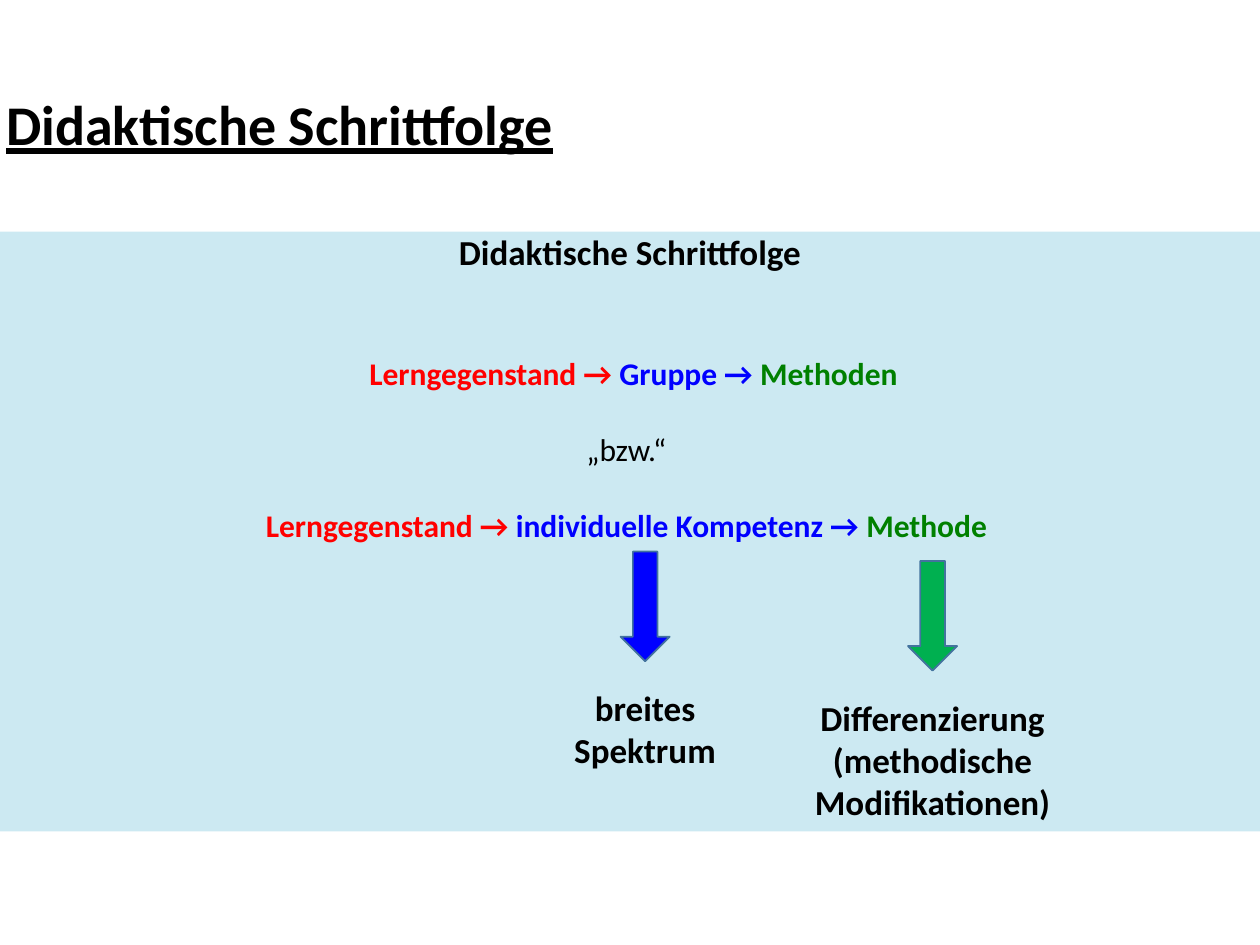
from pptx import Presentation
from pptx.dml.color import RGBColor
from pptx.enum.shapes import MSO_SHAPE as Form
from pptx.enum.text import MSO_ANCHOR as Anchor, PP_ALIGN as Align
from pptx.util import Cm, Pt

BLACK, RED, BLUE, GREEN = "000000", "FF0000", "0000FF", "008000"
ARROW_LEN, ARROW_WIDE, LABEL_DROP = 2.21, 0.99, 2.6


def color(code):
    return RGBColor.from_string(code)


def add_text(slide, box, lines, size=20, bold=True, under=False):
    """Each line is (space before, size or None, runs); a run is (text, colour, bold)."""
    frame = slide.shapes.add_textbox(*map(Cm, box)).text_frame
    frame.word_wrap = True
    frame.vertical_anchor = Anchor.TOP
    for i, (gap, own, runs) in enumerate(lines):
        para = frame.add_paragraph() if i else frame.paragraphs[0]
        para.alignment = Align.CENTER
        if gap:
            para.space_before = Pt(gap)
        for text, code, heavy in runs:
            run = para.add_run()
            run.text = text
            font = run.font
            font.name, font.size = "Calibri", Pt(own or size)
            font.bold, font.underline = bold and heavy, under
            font.color.rgb = color(code)


def plain(*texts):
    return [(0, None, [(text, BLACK, True)]) for text in texts]


def add_form(slide, kind, box, fill, line=None):
    form = slide.shapes.add_shape(kind, *map(Cm, box))
    form.shadow.inherit = False
    form.fill.solid()
    form.fill.fore_color.rgb = color(fill)
    if line:
        form.line.color.rgb = color(line)
        form.line.width = Pt(1)
    else:
        form.line.fill.background()
    return form


def add_steps(slide, box):
    def chain(group, method, lead=""):
        return [(lead + "Lerngegenstand → ", RED, True),
                (group + " → ", BLUE, True), (method, GREEN, True)]

    add_text(slide, box, [
        (0, 20, [("Didaktische Schrittfolge", BLACK, True)]),
        (46.4, None, chain("Gruppe", "Methoden", " ")),
        (22, None, [("„bzw.“ ", BLACK, False)]),
        (22, None, chain("individuelle Kompetenz", "Methode ")),
    ], size=18)


def add_branch(slide, box, fill, *texts):
    """Down-pointing arrow centred above its label."""
    left, top, width, height = box
    arrow = add_form(slide, Form.RIGHT_ARROW,
                     (left + (width - ARROW_LEN) / 2,
                      top + (ARROW_LEN - ARROW_WIDE) / 2,
                      ARROW_LEN, ARROW_WIDE), fill, "43739E")
    arrow.rotation = 90
    add_text(slide, (left, top + LABEL_DROP, width, height - LABEL_DROP),
             plain(*texts))


def main():
    deck = Presentation()
    deck.slide_width, deck.slide_height = Cm(25.4), Cm(19.05)
    slide = deck.slides.add_slide(deck.slide_layouts[6])
    add_form(slide, Form.RECTANGLE, (0, 4.67, 25.4, 12.09), "CCE9F2")
    add_steps(slide, (4.9, 4.52, 15.6, 6.58))
    add_branch(slide, (15.5, 11.31, 6.6, 5.42), "00B050",
               "Differenzierung", "(methodische Modifikationen)")
    add_branch(slide, (11.1, 11.12, 3.81, 4.56), BLUE, "breites Spektrum")
    add_text(slide, (-0.71, 1.68, 12.7, 1.63),
             plain("Didaktische Schrittfolge"), size=32, under=True)
    deck.save("out.pptx")


if __name__ == "__main__":
    main()
